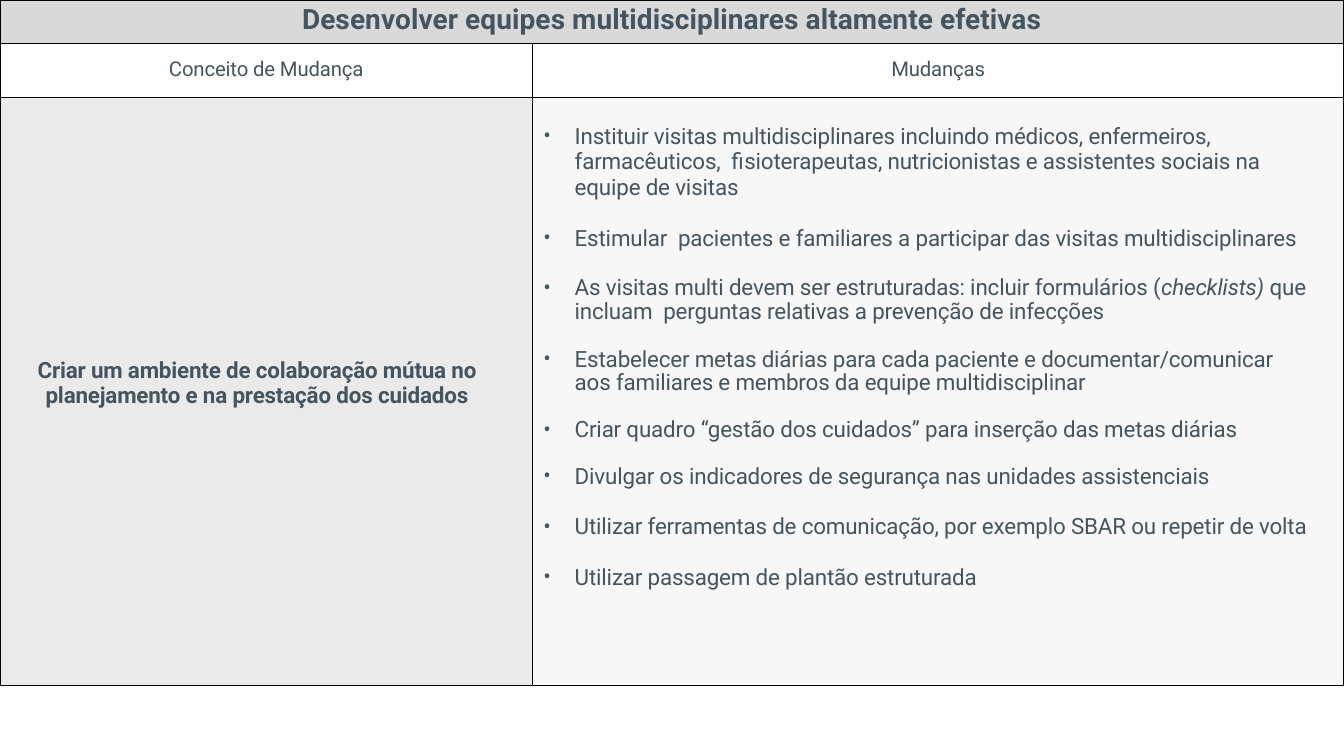
from lxml import etree
from pptx import Presentation
from pptx.dml.color import RGBColor
from pptx.enum.text import MSO_ANCHOR, PP_ALIGN
from pptx.oxml.ns import qn
from pptx.util import Inches, Pt

CENTER, LEFT = PP_ALIGN.CENTER, PP_ALIGN.LEFT
TOP = MSO_ANCHOR.TOP

COLS = [5.28, 8.05]
ROWS = [0.43, 0.54, 5.83]

# Text, line spacing (a ratio or points), space before in points, bulleted
ITEMS = [
    ("Instituir visitas multidisciplinares incluindo médicos, enfermeiros, "
     "farmacêuticos,  fisioterapeutas, nutricionistas e assistentes sociais "
     "na equipe de visitas", 0.98, 0, True),
    ("Estimular  pacientes e familiares a participar das visitas "
     "multidisciplinares", 0.98, 18, True),
    ("As visitas multi devem ser estruturadas: incluir formulários "
     "(*checklists)* que incluam  perguntas relativas a prevenção de infecções",
     Pt(17), 18.3, True),
    ("Estabelecer metas diárias para cada paciente e documentar/comunicar",
     Pt(16.3), 18, True),
    ("aos familiares e membros da equipe multidisciplinar", Pt(16.5), 0, False),
    ("Criar quadro “gestão dos cuidados” para inserção das metas diárias",
     Pt(17.1), 16.5, True),
    ("Divulgar os indicadores de segurança nas unidades assistenciais",
     Pt(17), 16.5, True),
    ("Utilizar ferramentas de comunicação, por exemplo SBAR ou repetir de volta",
     0.98, 17.5, True),
    ("Utilizar passagem de plantão estruturada", 0.98, 18, True),
]


def paint(hue):
    return RGBColor.from_string(hue)


class Deck:
    font, ink, line = "Roboto", "455560", "000000"

    def __init__(self):
        self.prs = Presentation()
        self.prs.slide_width = Inches(13.33)
        self.prs.slide_height = Inches(7.5)
        self.slide = self.prs.slides.add_slide(self.prs.slide_layouts[6])

    def table(self, cols, rows):
        grid = self.slide.shapes.add_table(
            len(rows), len(cols), 0, 0,
            Inches(sum(cols)), Inches(sum(rows))).table
        grid.first_row = grid.horz_banding = False
        for col, width in zip(grid.columns, cols):
            col.width = Inches(width)
        for row, height in zip(grid.rows, rows):
            row.height = Inches(height)
        return grid

    def cell(self, cell, fill, top=0, left=0, right=0):
        cell.fill.solid()
        cell.fill.fore_color.rgb = paint(fill)
        cell.vertical_anchor = TOP
        sides = {"top": top, "left": left, "right": right, "bottom": 0}
        for side, gap in sides.items():
            setattr(cell, "margin_" + side, Inches(gap))
        self.edge(cell)

    def edge(self, cell):
        props = cell._tc.get_or_add_tcPr()
        for spot, side in enumerate("LRTB"):
            rule = etree.Element(qn("a:ln" + side), w=str(Pt(1)))
            fill = etree.SubElement(rule, qn("a:solidFill"))
            etree.SubElement(fill, qn("a:srgbClr"), val=self.line)
            props.insert(spot, rule)

    def text(self, para, words, size=16, bold=False, align=CENTER,
             space=1.0, before=0, track=-10):
        look = {"alignment": align, "line_spacing": space,
                "space_before": Pt(before)}
        for name, value in look.items():
            setattr(para, name, value)
        # Words between asterisks are italic
        for turn, part in enumerate(words.split("*")):
            run = para.add_run()
            run.text = part
            style = {"name": self.font, "size": Pt(size), "bold": bold,
                     "italic": turn % 2 == 1}
            for name, value in style.items():
                setattr(run.font, name, value)
            run.font.color.rgb = paint(self.ink)
            run._r.get_or_add_rPr().set("spc", str(track))

    def list(self, frame, items):
        for turn, (words, space, before, dot) in enumerate(items):
            para = frame.add_paragraph() if turn else frame.paragraphs[0]
            self.text(para, words, align=LEFT, space=space, before=before)
            props = para._p.get_or_add_pPr()
            props.set("marL", str(Inches(0.42)))
            props.set("indent", str(Inches(-0.31 if dot else 0)))
            if dot:
                etree.SubElement(props, qn("a:buFont"), typeface=self.font)
                etree.SubElement(props, qn("a:buChar"), char="•")


def main():
    deck = Deck()
    grid = deck.table(COLS, ROWS)

    # Title row
    head = grid.cell(0, 0)
    head.merge(grid.cell(0, 1))
    deck.cell(head, "D9D9D9", top=0.03)
    deck.edge(grid.cell(0, 1))
    deck.text(head.text_frame.paragraphs[0],
              "Desenvolver equipes multidisciplinares altamente efetivas",
              size=20, bold=True, track=5)

    # Column heads
    for col, label in enumerate(["Conceito de Mudança", "Mudanças"]):
        cell = grid.cell(1, col)
        deck.cell(cell, "FFFFFF", top=0.14)
        deck.text(cell.text_frame.paragraphs[0], label, size=14.5)

    # Concept
    idea = grid.cell(2, 0)
    deck.cell(idea, "EAEAEA", top=2.58, left=0.09, right=0.27)
    deck.text(idea.text_frame.paragraphs[0],
              "Criar um ambiente de colaboração mútua no planejamento e na "
              "prestação dos cuidados", bold=True, space=0.98)

    # Changes
    body = grid.cell(2, 1)
    deck.cell(body, "F7F7F7", top=0.26, right=0.25)
    deck.list(body.text_frame, ITEMS)

    deck.prs.save("out.pptx")


if __name__ == "__main__":
    main()
